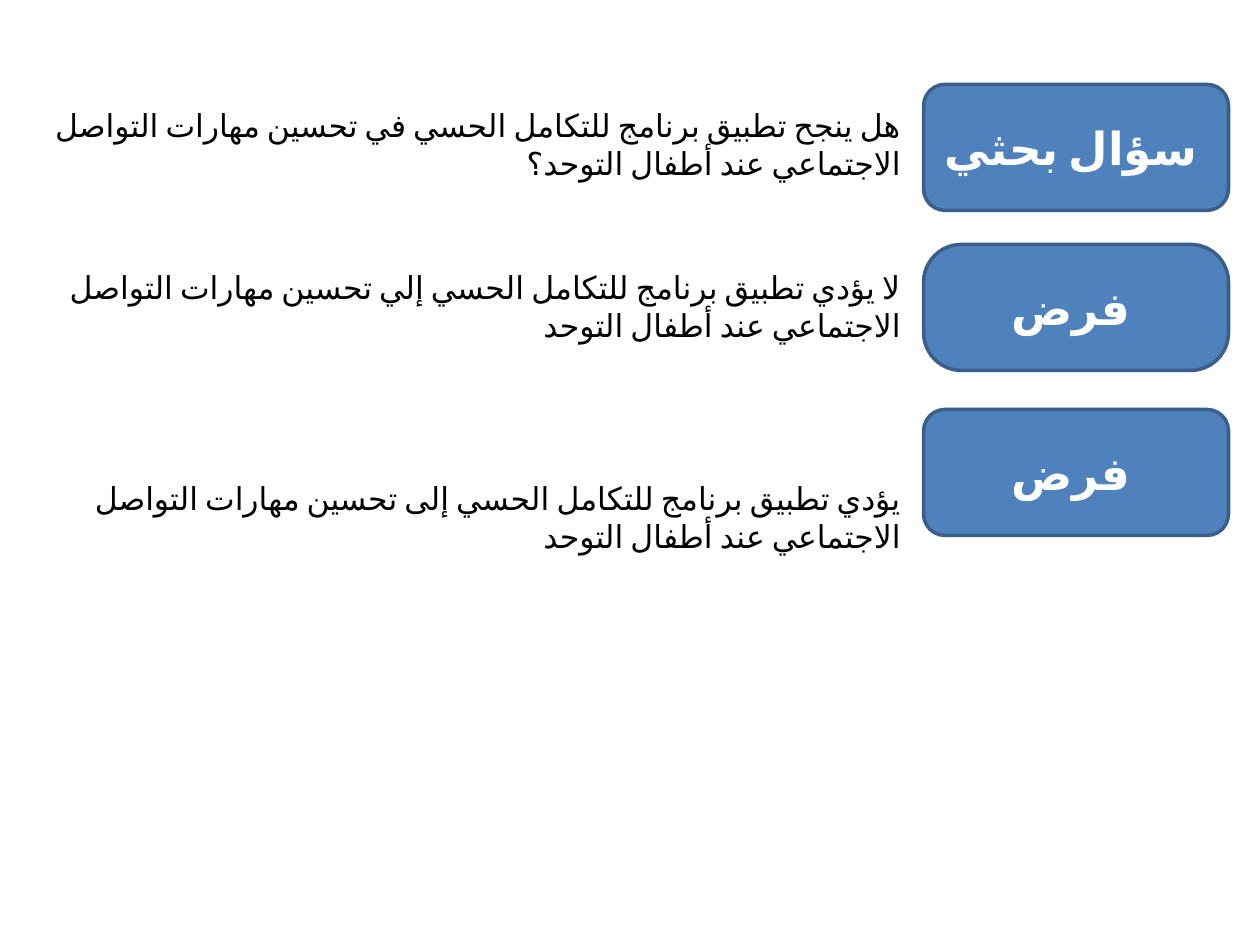
from lxml.etree import SubElement
from pptx import Presentation
from pptx.dml.color import RGBColor
from pptx.enum.lang import MSO_LANGUAGE_ID
from pptx.enum.shapes import MSO_SHAPE
from pptx.enum.text import MSO_ANCHOR, MSO_AUTO_SIZE, PP_ALIGN
from pptx.oxml.ns import qn
from pptx.util import Pt

PX = 9144
SLIDE = (1000, 750)
TEXT_X, TEXT_W, TEXT_H = 25, 700, 71
LABEL_X, LABEL_W, LABEL_H = 733, 242, 100
FONT = "Calibri"

# label, label top, corner, statement, statement top
ROWS = [
    ("سؤال بحثي ", 67, 0.17,
     "هل ينجح تطبيق برنامج للتكامل الحسي في تحسين مهارات التواصل الاجتماعي عند أطفال التوحد؟", 79),
    ("فرض ", 194, 0.3,
     "لا يؤدي تطبيق برنامج للتكامل الحسي إلي تحسين مهارات التواصل الاجتماعي عند أطفال التوحد", 208),
    ("فرض ", 325, 0.17,
     "يؤدي تطبيق برنامج للتكامل الحسي إلى تحسين مهارات التواصل الاجتماعي عند أطفال التوحد", 375),
]
ARABIC = {"name": FONT, "language_id": MSO_LANGUAGE_ID.ARABIC_EGYPT}
LABEL_FONT = {**ARABIC, "size": Pt(26), "bold": True}
TEXT_FONT = {**ARABIC, "size": Pt(18)}


def color(value):
    return RGBColor.from_string(value)


def box(*lengths):
    return [n * PX for n in lengths]


def write(sp, text, align, font, hue):
    tf = sp.text_frame
    tf.word_wrap = True
    p = tf.paragraphs[0]
    p.alignment = align
    r = p.add_run()
    r.text = text
    for key, value in font.items():
        setattr(r.font, key, value)
    r.font.color.rgb = color(hue)
    SubElement(r._r.get_or_add_rPr(), qn("a:cs")).set("typeface", FONT)
    return tf, p


def add_statement(s, text, top):
    sp = s.shapes.add_textbox(*box(TEXT_X, top, TEXT_W, TEXT_H))
    tf, p = write(sp, text, PP_ALIGN.RIGHT, TEXT_FONT, "000000")
    tf.auto_size = MSO_AUTO_SIZE.SHAPE_TO_FIT_TEXT
    p._p.get_or_add_pPr().set("rtl", "1")


def add_label(s, text, top, corner):
    sp = s.shapes.add_shape(MSO_SHAPE.ROUNDED_RECTANGLE, *box(LABEL_X, top, LABEL_W, LABEL_H))
    sp.adjustments[0] = corner
    sp.shadow.inherit = False
    sp.fill.solid()
    sp.fill.fore_color.rgb = color("4F81BD")
    sp.line.color.rgb = color("3A5F8C")
    sp.line.width = Pt(2)
    tf, _ = write(sp, text, PP_ALIGN.CENTER, LABEL_FONT, "FFFFFF")
    tf.vertical_anchor = MSO_ANCHOR.MIDDLE


def main():
    """Build the slide of a research question and its two hypotheses."""
    prs = Presentation()
    prs.slide_width, prs.slide_height = box(*SLIDE)
    s = prs.slides.add_slide(prs.slide_layouts[6])
    for _, _, _, statement, top in ROWS:
        add_statement(s, statement, top)
    for label, top, corner, _, _ in ROWS:
        add_label(s, label, top, corner)
    prs.save("out.pptx")


if __name__ == "__main__":
    main()
